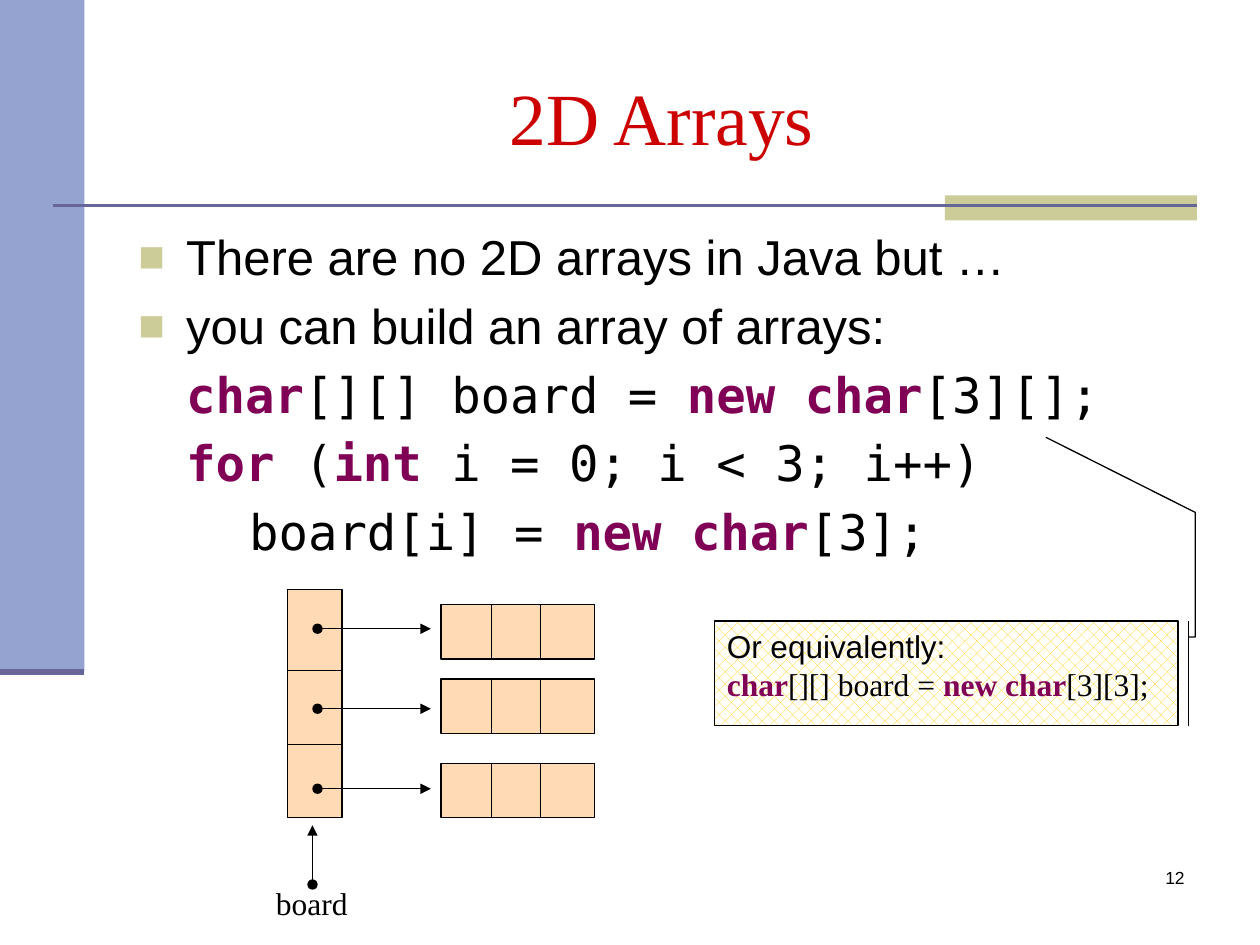
from dataclasses import dataclass

from lxml import etree
from pptx import Presentation
from pptx.dml.color import RGBColor
from pptx.enum.dml import MSO_PATTERN
from pptx.enum.shapes import MSO_CONNECTOR, MSO_SHAPE
from pptx.enum.text import MSO_ANCHOR, PP_ALIGN
from pptx.oxml.ns import qn
from pptx.util import Inches, Pt

COLUMNS, ROWS = 100, 75
UNIT = Inches(0.1)

STRAIGHT = MSO_CONNECTOR.STRAIGHT
RECTANGLE = MSO_SHAPE.RECTANGLE
CALLOUT = MSO_SHAPE.LINE_CALLOUT_3_BORDER_AND_ACCENT_BAR
HATCH = MSO_PATTERN.PERCENT_30
LEFT, CENTER, RIGHT = PP_ALIGN.LEFT, PP_ALIGN.CENTER, PP_ALIGN.RIGHT
TOP, MIDDLE = MSO_ANCHOR.TOP, MSO_ANCHOR.MIDDLE

BLACK = RGBColor(0x00, 0x00, 0x00)
WHITE = RGBColor(0xFF, 0xFF, 0xFF)
PERIWINKLE = RGBColor(0x95, 0xA3, 0xD1)
SLATE = RGBColor(0x66, 0x66, 0x99)
KHAKI = RGBColor(0xCC, 0xCC, 0x99)
RED = RGBColor(0xCC, 0x00, 0x00)
PLUM = RGBColor(0x7F, 0x00, 0x55)
PEACH = RGBColor(0xFF, 0xDA, 0xB5)
GOLD = RGBColor(0xFF, 0xCC, 0x00)

SANS, SERIF, MONO = "Arial", "Times New Roman", "DejaVu Sans Mono"


@dataclass
class Box:
    left: float
    top: float
    width: float
    height: float

    def inner(self, left, top, width, height):
        return Box(self.left + left, self.top + top, width, height)

    def lengths(self):
        return [round(n * UNIT) for n in (self.left, self.top, self.width, self.height)]


def add_block(page, box, fill, outlined=False, kind=RECTANGLE):
    block = page.shapes.add_shape(kind, *box.lengths())
    block.shadow.inherit = False
    if fill is None:
        block.fill.patterned()
        block.fill.pattern = HATCH
        block.fill.fore_color.rgb = GOLD
        block.fill.back_color.rgb = WHITE
    else:
        block.fill.solid()
        block.fill.fore_color.rgb = fill
    if outlined:
        block.line.color.rgb = BLACK
        block.line.width = Pt(0.75)
    else:
        block.line.fill.background()
    return block


def add_line(page, box, color=BLACK, weight=0.75, arrow=False):
    left, top, width, height = box.lengths()
    line = page.shapes.add_connector(STRAIGHT, left, top, left + width, top + height)
    line.line.color.rgb = color
    line.line.width = Pt(weight)
    props = line._element.spPr
    if arrow:
        stroke = props.find(qn("a:ln"))
        etree.SubElement(stroke, qn("a:headEnd"), type="oval")
        etree.SubElement(stroke, qn("a:tailEnd"), type="triangle")
    etree.SubElement(props, qn("a:effectLst"))


def add_text_box(page, box, anchor=TOP, wrap=True):
    frame = page.shapes.add_textbox(*box.lengths()).text_frame
    frame.word_wrap = wrap
    frame.vertical_anchor = anchor
    return frame


def write(para, spans, size, font, color=BLACK, align=LEFT):
    para.alignment = align
    for text, keyword in spans:
        span = para.add_run()
        span.text = text
        span.font.size = Pt(size)
        span.font.name = font
        span.font.bold = keyword
        span.font.color.rgb = PLUM if keyword else color


def set_list_format(para, bulleted):
    indent = Inches(0.38)
    props = para._p.get_or_add_pPr()
    props.set("marL", str(indent))
    props.set("indent", str(-indent))
    before = etree.SubElement(props, qn("a:spcBef"))
    etree.SubElement(before, qn("a:spcPct"), val="20000")
    if bulleted:
        tint = etree.SubElement(props, qn("a:buClr"))
        etree.SubElement(tint, qn("a:srgbClr"), val=str(KHAKI))
        etree.SubElement(props, qn("a:buSzPct"), val="90000")
        etree.SubElement(props, qn("a:buFont"), typeface=SANS)
        etree.SubElement(props, qn("a:buChar"), char="■")
    else:
        etree.SubElement(props, qn("a:buNone"))


def paragraphs(frame, count):
    return [frame.paragraphs[0]] + [frame.add_paragraph() for _ in range(count - 1)]


def draw_backdrop(page, box):
    add_block(page, box.inner(0, 0, 6.7, 53.3), PERIWINKLE)
    add_block(page, box.inner(75, 15.5, 20, 2), KHAKI)
    add_line(page, box.inner(4.2, 16.3, 90.8, 0), SLATE, 1.5)
    add_line(page, box.inner(0, 53.3, 6.7, 0), SLATE, 3.5)


def draw_title(page, box):
    frame = add_text_box(page, box, MIDDLE)
    write(frame.paragraphs[0], [("2D Arrays", False)], 42, SERIF, RED, CENTER)


def draw_page_number(page, box):
    frame = add_text_box(page, box)
    write(frame.paragraphs[0], [("12", False)], 10, SANS, align=RIGHT)


def draw_body(page, box):
    points = ["There are no 2D arrays in Java but …", "you can build an array of arrays:"]
    code = [
        [("\t", False), ("char", True), ("[][] board = ", False),
         ("new char", True), ("[3][];", False)],
        [("\t", False), ("for", True), (" (", False), ("int ", True),
         ("i = 0; i < 3; i++)", False)],
        [("\t\tboard[i] = ", False), ("new char", True), ("[3];", False)],
    ]
    lines = [([(point, False)], SANS) for point in points] + [(spans, MONO) for spans in code]
    frame = add_text_box(page, box)
    for para, (spans, font) in zip(paragraphs(frame, len(lines)), lines):
        write(para, spans, 28, font)
        set_list_format(para, font == SANS)


def draw_cell_row(page, box):
    add_block(page, box, PEACH, True)
    for divider in (4, 7.9):
        add_line(page, box.inner(divider, 0, 0, box.height))


def draw_array_diagram(page, box):
    column = box.inner(1.9, 0, 4.35, 18.1)
    add_block(page, column, PEACH, True)
    for divider in (6.4, 12.3):
        add_line(page, column.inner(0, divider, column.width, 0))
    for index, row_top in enumerate((1.2, 7.1, 13.8)):
        draw_cell_row(page, box.inner(14.1, row_top, 12.2, 4.3))
        add_line(page, box.inner(4.3, 3.1 + 6.35 * index, 9, 0), arrow=True)
    label = add_text_box(page, box.inner(0, 22.9, 7.7, 4), wrap=False)
    write(label.paragraphs[0], [("board", False)], 18, SERIF, align=CENTER)
    add_line(page, box.inner(3.9, 23.4, 0, -4.7), arrow=True)


def draw_callout(page, box):
    callout = add_block(page, box, None, True, CALLOUT)
    bends = (0.151, 1.023, 0.151, 1.037, -1.04, 1.037, -1.758, 0.715)
    for index, bend in enumerate(bends):
        callout.adjustments[index] = bend
    frame = callout.text_frame
    frame.word_wrap = True
    frame.vertical_anchor = TOP
    heading, code = paragraphs(frame, 2)
    write(heading, [("Or equivalently:", False)], 18, SANS)
    write(code, [("char", True), ("[][] board = ", False),
                 ("new char", True), ("[3][3];", False)], 18, SERIF)


def main():
    deck = Presentation()
    deck.slide_width = COLUMNS * UNIT
    deck.slide_height = ROWS * UNIT
    page = deck.slides.add_slide(deck.slide_layouts[6])
    draw_backdrop(page, Box(0, 0, COLUMNS, ROWS))
    draw_page_number(page, Box(74.2, 68.3, 20.8, 5))
    draw_title(page, Box(10, 3, 85, 12.5))
    draw_body(page, Box(10, 17.5, 85, 49.5))
    draw_array_diagram(page, Box(20.9, 46.8, 26.3, 26.9))
    draw_callout(page, Box(56.7, 49.3, 36.8, 8.3))
    deck.save("out.pptx")


if __name__ == "__main__":
    main()
